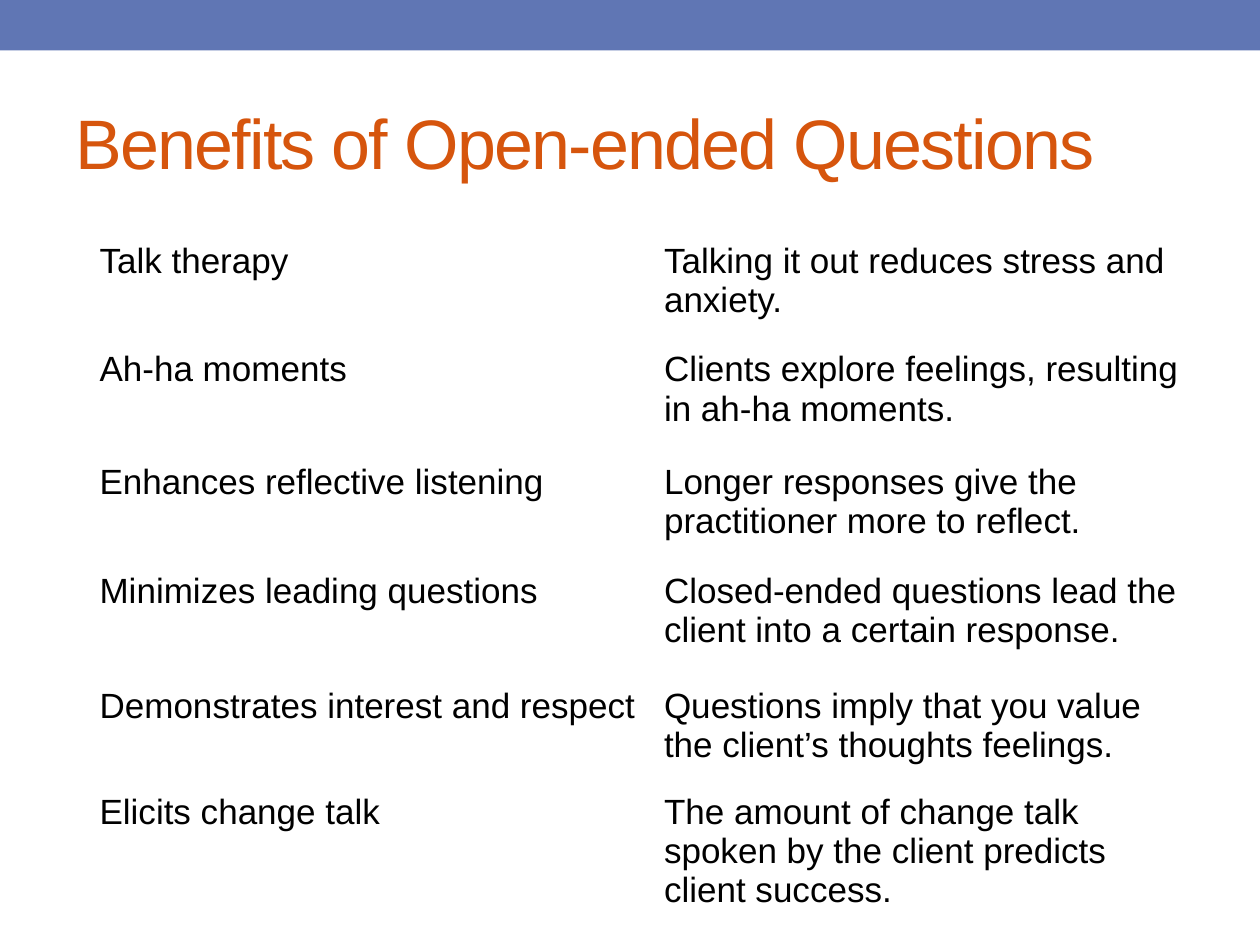
from pptx import Presentation
from pptx import util as u
from pptx.dml.color import RGBColor
from pptx.enum import shapes, text

BLUE = RGBColor(0x60, 0x76, 0xB4)
ORANGE = RGBColor(0xD6, 0x55, 0x0D)
BLACK = RGBColor(0, 0, 0)

COLS = [4.48, 4.34]
ROWS = [
    (0.86, "Talk therapy", "Talking it out reduces stress and anxiety."),
    (0.89, "Ah-ha moments", "Clients explore feelings, resulting in ah-ha moments."),
    (0.87, "Enhances reflective listening",
     "Longer responses give the practitioner more to reflect."),
    (0.91, "Minimizes leading questions",
     "Closed-ended questions lead the client into a certain response."),
    (0.84, "Demonstrates interest and respect",
     "Questions imply that you value the client’s thoughts feelings."),
    (0.64, "Elicits change talk",
     "The amount of change talk spoken by the client predicts client success."),
]


def box(*sizes):
    return [u.Inches(size) for size in sizes]


def write(frame, words, size, color):
    run = frame.paragraphs[0].add_run()
    run.text = words
    style = {"name": "Arial", "size": u.Pt(size), "bold": False}
    for key, value in style.items():
        setattr(run.font, key, value)
    run.font.color.rgb = color
    return run


def add_band(slide):
    band = slide.shapes.add_shape(shapes.MSO_SHAPE.RECTANGLE, *box(0, 0, 10, 0.4))
    band.shadow.inherit = False
    band.fill.solid()
    band.fill.fore_color.rgb = BLUE
    band.line.fill.background()


def add_title(slide, words):
    frame = slide.shapes.add_textbox(*box(0.5, 0.58, 9, 1.08)).text_frame
    frame.word_wrap = True
    frame.vertical_anchor = text.MSO_ANCHOR.MIDDLE
    run = write(frame, words, 40, ORANGE)
    # Tighten the letters by one point
    run.font._element.set("spc", "-100")


def add_grid(slide):
    holder = slide.shapes.add_table(
        len(ROWS), len(COLS), *box(0.69, 1.87, 8.81, 5.47))
    table = holder.table
    table.first_row = table.horz_banding = False
    for col, width in zip(table.columns, COLS):
        col.width = u.Inches(width)
    for row, (height, *words) in zip(table.rows, ROWS):
        row.height = u.Inches(height)
        for cell, line in zip(row.cells, words):
            cell.fill.background()
            write(cell.text_frame, line, 20, BLACK)
    # The last row grows to hold its three lines
    holder.height = u.Inches(5.47)


def main():
    deck = Presentation()
    deck.slide_width, deck.slide_height = box(10, 7.5)
    slide = deck.slides.add_slide(deck.slide_layouts[6])

    # Top band and heading
    add_band(slide)
    add_title(slide, "Benefits of Open-ended Questions")

    # Benefits and reasons
    add_grid(slide)
    deck.save("out.pptx")


if __name__ == "__main__":
    main()
